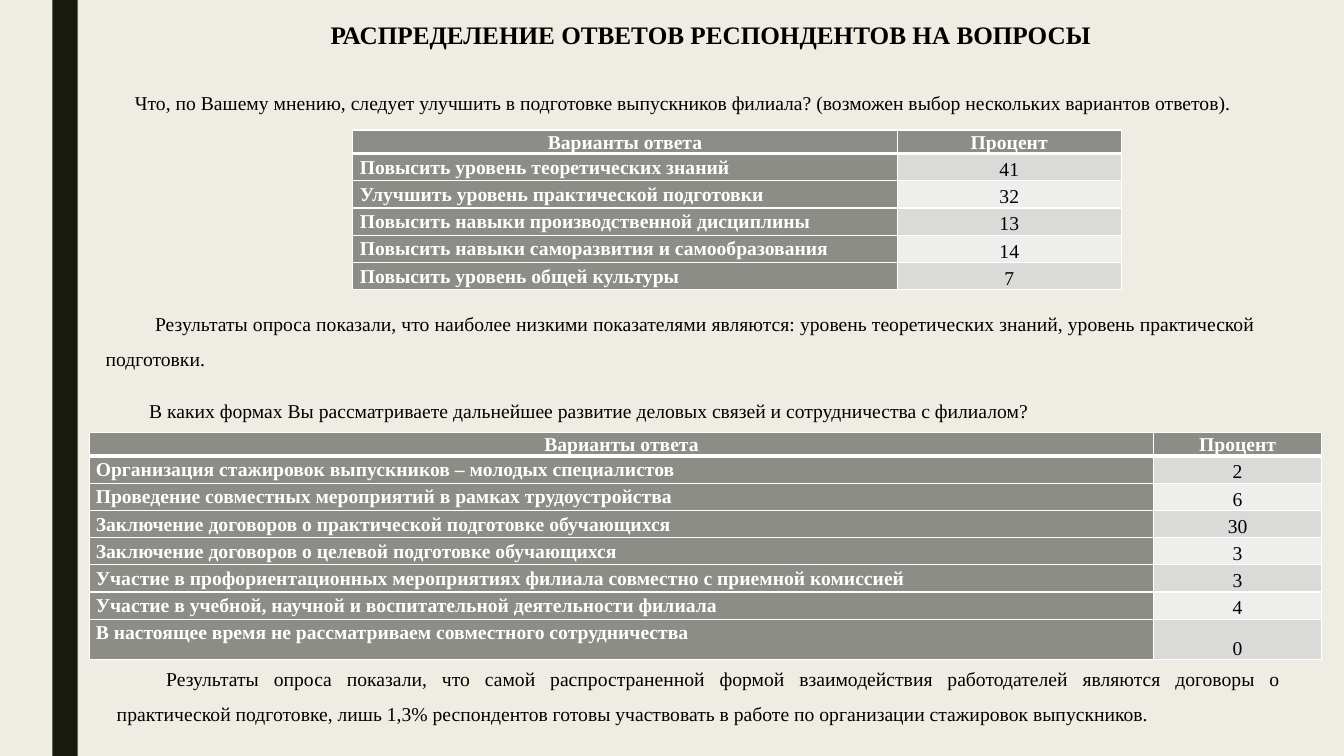
"""Build a slide with two survey tables and their conclusions."""
from lxml.etree import SubElement
from pptx import Presentation
from pptx.dml.color import RGBColor
from pptx.enum.shapes import MSO_SHAPE
from pptx.enum.text import MSO_ANCHOR, PP_ALIGN
from pptx.oxml.ns import qn
from pptx.util import Inches, Pt

FONT = "Times New Roman"
HEADER = ("Варианты ответа", "Процент")
IMPROVEMENTS = [
    ("Повысить уровень теоретических знаний", 41),
    ("Улучшить уровень практической подготовки", 32),
    ("Повысить навыки производственной дисциплины", 13),
    ("Повысить навыки саморазвития и самообразования", 14),
    ("Повысить уровень общей культуры", 7),
]
COOPERATION = [
    ("Организация стажировок выпускников – молодых специалистов", 2),
    ("Проведение совместных мероприятий в рамках трудоустройства", 6),
    ("Заключение договоров о практической подготовке обучающихся", 30),
    ("Заключение договоров о целевой подготовке обучающихся", 3),
    ("Участие в профориентационных мероприятиях филиала совместно с приемной комиссией", 3),
    ("Участие в учебной, научной и воспитательной деятельности филиала", 4),
    ("В настоящее время не рассматриваем совместного сотрудничества", 0),
]


def rgb(value):
    """Turn a hex string into a colour."""
    return RGBColor.from_string(value)


def style(p, align, size=14, color="000000", bold=False, spacing=1.0):
    """Set the font, alignment and line spacing of a paragraph."""
    p.alignment, p.line_spacing = align, spacing
    p.font.name, p.font.size, p.font.bold = FONT, Pt(size), bold
    p.font.color.rgb = rgb(color)


def add_text(s, box, text, align=PP_ALIGN.JUSTIFY, margin=0, indent=0.49, **look):
    """Add a wrapped text box holding one paragraph."""
    tf = s.shapes.add_textbox(*map(Inches, box)).text_frame
    tf.word_wrap = True
    p = tf.paragraphs[0]
    p.text = text
    style(p, align, **look)
    pPr = p._p.get_or_add_pPr()
    pPr.set("marL", str(Inches(margin)))
    pPr.set("indent", str(Inches(indent)))


def set_borders(cell, top, bottom):
    """Draw white borders around a cell, widths in points."""
    tcPr = cell._tc.get_or_add_tcPr()
    widths = {"a:lnL": 1, "a:lnR": 1, "a:lnT": top, "a:lnB": bottom}
    for i, (tag, width) in enumerate(widths.items()):
        ln = SubElement(tcPr, qn(tag), w=str(Pt(width)))
        SubElement(SubElement(ln, qn("a:solidFill")), qn("a:srgbClr"), val="FFFFFF")
        tcPr.insert(i, ln)


def fill_cell(cell, text, row, col, inset):
    """Write and format one table cell by its place in the table."""
    dark = row == 0 or col == 0
    label = row > 0 and col == 0
    band = "DADBD9" if row % 2 else "EEEEED"
    cell.fill.solid()
    cell.fill.fore_color.rgb = rgb("8C8D86" if dark else band)
    cell.margin_left = cell.margin_right = Inches(inset)
    cell.margin_top = cell.margin_bottom = 0
    cell.vertical_anchor = MSO_ANCHOR.TOP if label else MSO_ANCHOR.BOTTOM
    p = cell.text_frame.paragraphs[0]
    p.text = str(text)
    style(p, PP_ALIGN.LEFT if label else PP_ALIGN.CENTER, bold=dark,
          color="FFFFFF" if dark else "000000", spacing=1.15 if label else 1.0)
    set_borders(cell, 3 if row == 1 else 1, 3 if row == 0 else 1)


def add_answers(s, left, top, widths, answers, inset, last=0.27):
    """Add a table of answers with their percentages."""
    heights = [0.23] + [0.27] * (len(answers) - 1) + [last]
    box = map(Inches, (left, top, sum(widths), sum(heights)))
    table = s.shapes.add_table(len(heights), len(widths), *box).table
    for column, width in zip(table.columns, widths):
        column.width = Inches(width)
    for row, height in zip(table.rows, heights):
        row.height = Inches(height)
    for r, values in enumerate([HEADER, *answers]):
        for c, value in enumerate(values):
            fill_cell(table.cell(r, c), value, r, c, inset)


def add_side_bar(s):
    """Add the dark vertical bar at the left."""
    sp = s.shapes.add_shape(MSO_SHAPE.RECTANGLE, Inches(0.52), 0, Inches(0.25), Inches(7.5))
    sp.shadow.inherit = False
    sp.fill.solid()
    sp.fill.fore_color.rgb = rgb("191B0E")
    sp.line.fill.background()


def main():
    """Build and save the slide."""
    prs = Presentation()
    prs.slide_width, prs.slide_height = Inches(13.33), Inches(7.5)
    s = prs.slides.add_slide(prs.slide_layouts[6])
    s.background.fill.solid()
    s.background.fill.fore_color.rgb = rgb("EFEDE3")
    add_side_bar(s)
    add_text(s, (1.93, 0.14, 8.99, 0.4), "РАСПРЕДЕЛЕНИЕ ОТВЕТОВ РЕСПОНДЕНТОВ НА ВОПРОСЫ",
             align=PP_ALIGN.RIGHT, indent=0, size=18, bold=True)
    add_text(s, (0.75, 0.85, 11.66, 0.34),
             "Что, по Вашему мнению, следует улучшить в подготовке выпускников филиала? "
             "(возможен выбор нескольких вариантов ответов).")
    add_answers(s, 3.5, 1.29, (5.4, 2.22), IMPROVEMENTS, 0.07)
    add_text(s, (0.95, 2.93, 11.6, 0.77),
             "Результаты опроса показали, что наиболее низкими показателями являются: "
             "уровень теоретических знаний, уровень практической подготовки.", spacing=1.5)
    add_text(s, (0.89, 3.91, 12.05, 0.34),
             "В каких формах Вы рассматриваете дальнейшее развитие деловых связей "
             "и сотрудничества с филиалом?")
    add_answers(s, 0.89, 4.29, (10.55, 1.67), COOPERATION, 0.06, last=0.4)
    add_text(s, (0.56, 6.45, 12.24, 0.81),
             "Результаты опроса показали, что самой распространенной формой взаимодействия "
             "работодателей являются договоры о практической подготовке, лишь 1,3% респондентов "
             "готовы участвовать в работе по организации стажировок выпускников.",
             margin=0.5, spacing=1.5)
    prs.save("out.pptx")


if __name__ == "__main__":
    main()
